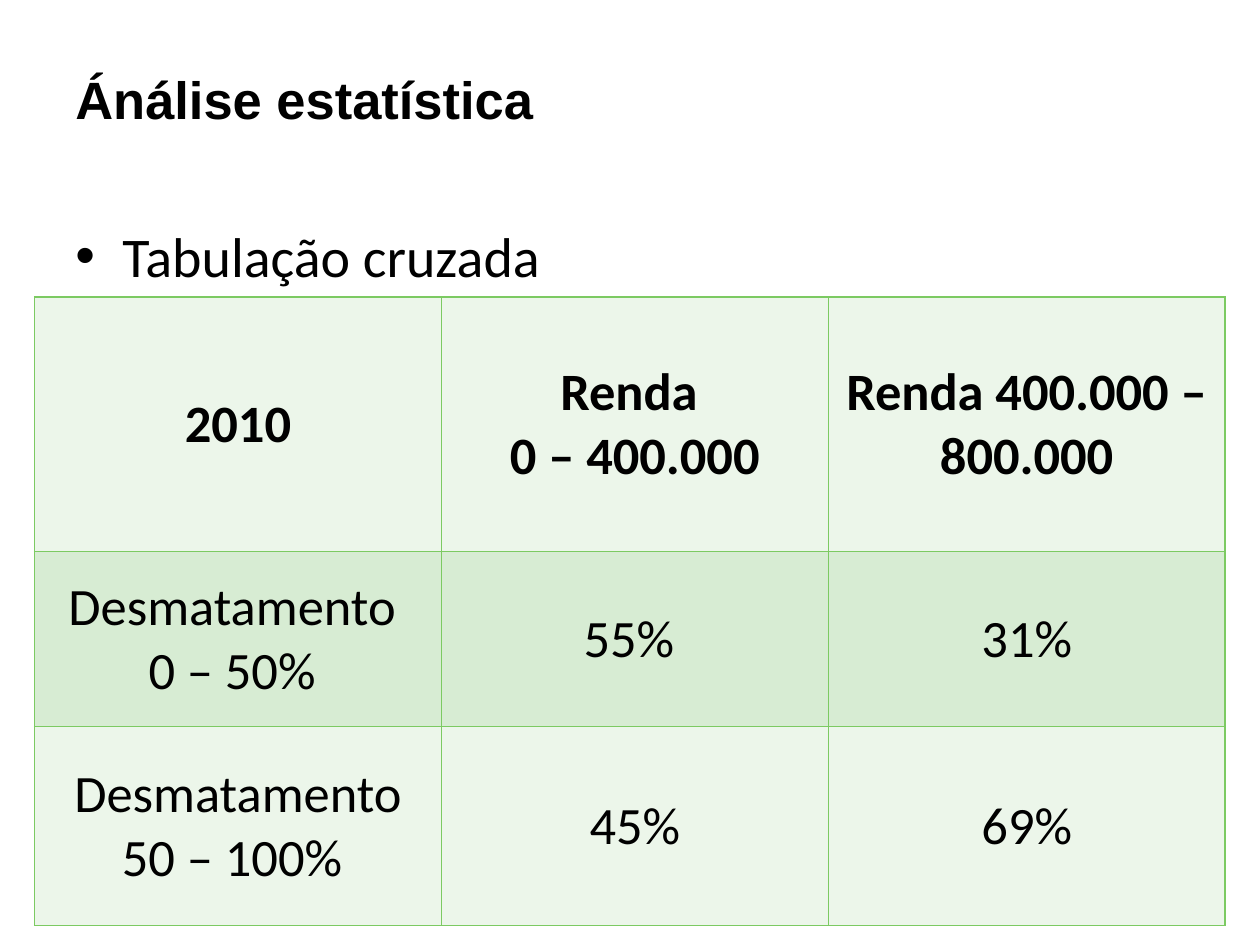
from dataclasses import dataclass

from lxml import etree
from pptx import Presentation
from pptx import util as u
from pptx.dml.color import RGBColor
from pptx.enum import text
from pptx.oxml.ns import qn


@dataclass(frozen=True)
class Theme:
    ink: str = "000000"
    border: str = "7CCA62"
    pale: str = "ECF6EA"
    band: str = "D7ECD3"
    title_font: str = "Arial"
    body_font: str = "Calibri"
    title_size: int = 30
    bullet_size: int = 32
    cell_size: int = 30


class SlideBuilder:
    def __init__(self, page, theme):
        self.page = page
        self.theme = theme

    def span(self, para, words, size, font, bold=False):
        span = para.add_run()
        span.text = words
        span.font.size = u.Pt(size)
        span.font.name = font
        span.font.bold = bold
        span.font.color.rgb = RGBColor.from_string(self.theme.ink)

    def body(self, left, top, width, height, title, item):
        """Add one text box with a bold title and a bulleted item below it."""
        box = self.page.shapes.add_textbox(u.Cm(left), u.Cm(top), u.Cm(width), u.Cm(height))
        frame = box.text_frame
        frame.word_wrap = True
        frame.margin_top = u.Cm(0.24)
        self.span(frame.paragraphs[0], title, self.theme.title_size, self.theme.title_font, True)
        para = frame.add_paragraph()
        para.space_before = u.Pt(52)
        self.span(para, item, self.theme.bullet_size, self.theme.body_font)
        self.bullet(para, u.Cm(0.95))

    def bullet(self, para, indent):
        props = para._p.get_or_add_pPr()
        props.set("marL", str(indent))
        props.set("indent", str(-indent))
        etree.SubElement(props, qn("a:buFont"), typeface=self.theme.title_font)
        etree.SubElement(props, qn("a:buChar"), char="•")

    def table(self, left, top, widths, heights, rows):
        """Add a table whose cells are lists of lines; the first row is bold."""
        frame = self.page.shapes.add_table(
            len(heights), len(widths), u.Cm(left), u.Cm(top),
            u.Cm(sum(widths)), u.Cm(sum(heights)))
        table = frame.table
        for column, width in zip(table.columns, widths):
            column.width = u.Cm(width)
        for number, (row, height, cells) in enumerate(zip(table.rows, heights, rows)):
            row.height = u.Cm(height)
            fill = self.theme.band if number % 2 else self.theme.pale
            for cell, lines in zip(row.cells, cells):
                self.cell(cell, lines, fill, bold=number == 0)

    def cell(self, cell, lines, fill, bold):
        cell.vertical_anchor = text.MSO_ANCHOR.MIDDLE
        self.borders(cell)
        cell.fill.solid()
        cell.fill.fore_color.rgb = RGBColor.from_string(fill)
        frame = cell.text_frame
        for number, line in enumerate(lines):
            para = frame.add_paragraph() if number else frame.paragraphs[0]
            para.alignment = text.PP_ALIGN.CENTER
            self.span(para, line, self.theme.cell_size, self.theme.body_font, bold)

    def borders(self, cell):
        props = cell._tc.get_or_add_tcPr()
        for side in ("a:lnL", "a:lnR", "a:lnT", "a:lnB"):
            line = etree.SubElement(props, qn(side), w=str(u.Pt(1)))
            fill = etree.SubElement(line, qn("a:solidFill"))
            etree.SubElement(fill, qn("a:srgbClr"), val=self.theme.border)


def main():
    deck = Presentation()
    deck.slide_width, deck.slide_height = u.Cm(25.4), u.Cm(19.05)
    page = deck.slides.add_slide(deck.slide_layouts[6])
    builder = SlideBuilder(page, Theme())
    builder.body(1.27, 1.12, 22.86, 15.9, "Ánálise estatística", "Tabulação cruzada")
    builder.table(
        0.7, 5.99, widths=[8.2, 7.8, 8], heights=[5.13, 3.53, 4.01],
        rows=[
            [["2010"], ["Renda ", "0 – 400.000"], ["Renda 400.000 – 800.000"]],
            [["Desmatamento ", "0 – 50% "], ["55% "], ["31%"]],
            [["Desmatamento 50 – 100% "], ["45%"], ["69%"]],
        ])
    deck.save("out.pptx")


if __name__ == "__main__":
    main()
